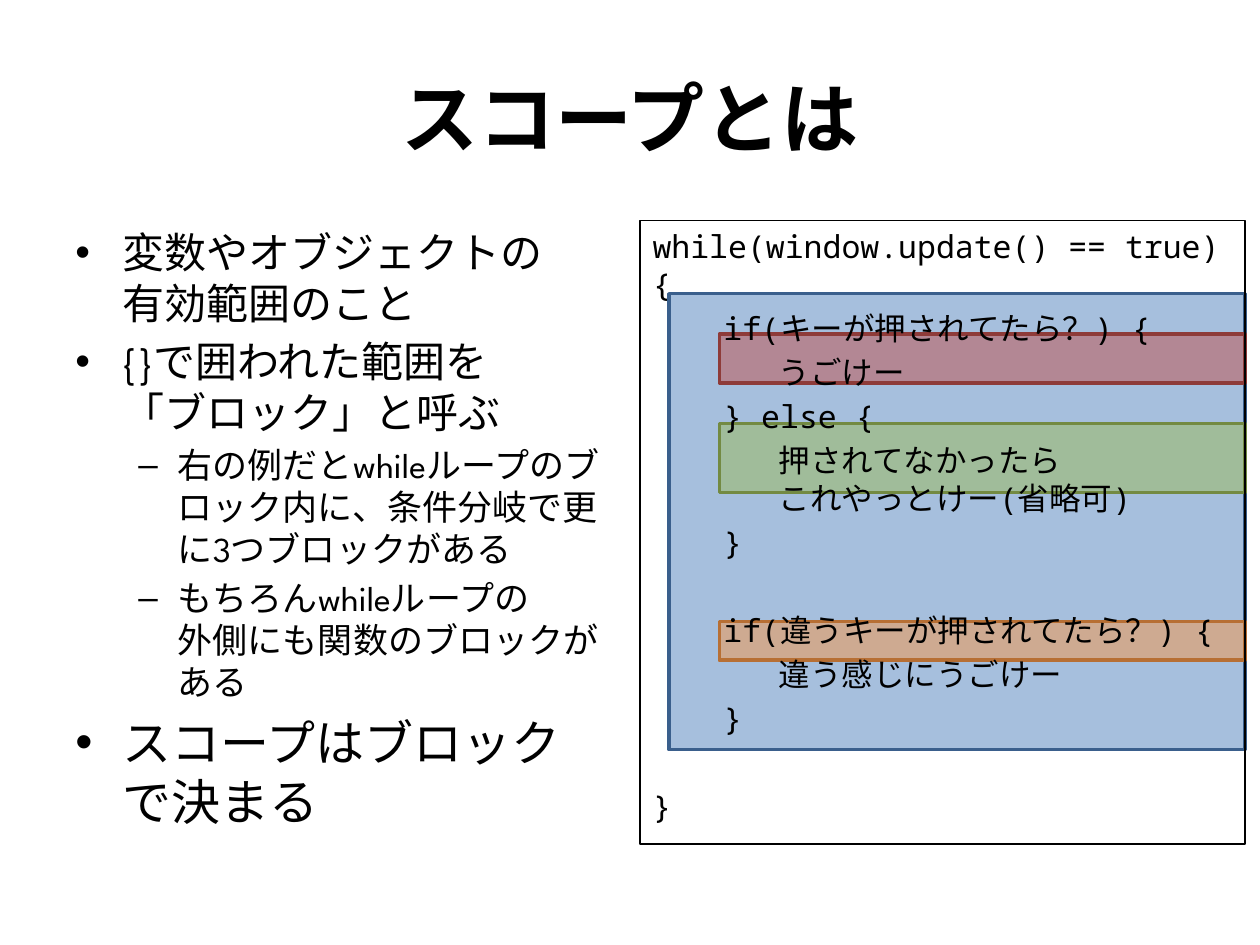
from lxml import etree
from pptx import Presentation
from pptx.dml.color import RGBColor
from pptx.enum.shapes import MSO_SHAPE
from pptx.enum.text import MSO_ANCHOR, PP_ALIGN
from pptx.oxml.ns import qn
from pptx.util import Pt

RECTANGLE = MSO_SHAPE.RECTANGLE
TOP, MIDDLE = MSO_ANCHOR.TOP, MSO_ANCHOR.MIDDLE
LEFT, CENTER = PP_ALIGN.LEFT, PP_ALIGN.CENTER
BODY_FONT, CODE_FONT = "League Spartan", "Noto Sans Mono"
CODE_SIZE = 18
BLANK_LINE = 25.2

# Content: text, size, level
TITLE = "スコープとは"
POINTS = [
    ("変数やオブジェクトの\v有効範囲のこと", 24, 0),
    ("{}で囲われた範囲を\v「ブロック」と呼ぶ", 24, 0),
    ("右の例だとwhileループのブロック内に、条件分岐で更に3つブロックがある", 20, 1),
    ("もちろんwhileループの\v外側にも関数のブロックがある", 20, 1),
    ("スコープはブロックで決まる", 28, 0),
]
BULLETS = [("•", 27, -27), ("–", 58.5, -22.5)]  # mark, margin, indent

# Code lines: text, nesting depth, blank lines above
CODE = [
    ("while(window.update() == true) {", 0, 0),
    ("if(キーが押されてたら？) {", 1, 0),
    ("うごけー", 2, 0),
    ("} else {", 1, 0),
    ("押されてなかったら\vこれやっとけー(省略可)", 2, 0),
    ("}", 1, 0),
    ("if(違うキーが押されてたら？) {", 1, 1),
    ("違う感じにうごけー", 2, 0),
    ("}", 1, 0),
    ("}", 0, 1),
]
CODE_MARGINS = [0, 40.5, 72]

# Code blocks: left, top, height, fill, line
RIGHT_EDGE = 711.4
BLOCKS = [
    (382.3, 167.8, 260.6, "4F81BD", "3A5F8C"),
    (411.1, 190.8, 28.1, "C0504D", "8E3B39"),
    (411.1, 241.9, 39.6, "9BBB59", "738A42"),
    (411.1, 355, 22.3, "F79646", "B76F34"),
]


def color(value):
    return RGBColor.from_string(value)


def set_up_frame(shape, anchor):
    frame = shape.text_frame
    frame.word_wrap = True
    frame.vertical_anchor = anchor
    return frame


def add_paragraph(frame, text, size, font, align=LEFT, bold=False):
    para = frame.paragraphs[0] if not frame.text else frame.add_paragraph()
    para.text = text
    para.alignment = align
    para.font.name = font
    para.font.size = Pt(size)
    para.font.bold = bold
    para.font.color.rgb = color("000000")
    return para


def set_margin(para, margin, indent=0, mark=None):
    properties = para._p.get_or_add_pPr()
    properties.set("marL", str(Pt(margin)))
    properties.set("indent", str(Pt(indent)))
    if mark:
        font = etree.SubElement(properties, qn("a:buFont"), typeface="Arial")
        bullet = etree.SubElement(properties, qn("a:buChar"), char=mark)
        for offset, element in enumerate((font, bullet)):
            properties.remove(element)
            properties.insert(properties.index(properties.find(qn("a:defRPr"))), element)


def add_rectangle(page, left, top, height, line, width):
    shape = page.shapes.add_shape(
        RECTANGLE, Pt(left), Pt(top), Pt(RIGHT_EDGE - left), Pt(height))
    shape.shadow.inherit = False
    shape.line.color.rgb = color(line)
    shape.line.width = Pt(width)
    return shape


deck = Presentation()
deck.slide_width, deck.slide_height = Pt(720), Pt(540)
page = deck.slides.add_slide(deck.slide_layouts[6])

# Title
box = page.shapes.add_textbox(Pt(36), Pt(21.6), Pt(648), Pt(90))
add_paragraph(set_up_frame(box, MIDDLE), TITLE, 44, BODY_FONT, CENTER, True)

# Bullet points
box = page.shapes.add_textbox(Pt(36), Pt(126), Pt(318.2), Pt(356.4))
frame = set_up_frame(box, TOP)
for text, size, level in POINTS:
    para = add_paragraph(frame, text, size, BODY_FONT)
    para.level = level
    para.space_before = Pt(size * 0.2)
    mark, margin, indent = BULLETS[level]
    set_margin(para, margin, indent, mark)

# Half-transparent block areas
for left, top, height, fill, line in BLOCKS:
    block = add_rectangle(page, left, top, height, line, 2)
    block.fill.solid()
    block.fill.fore_color.rgb = color(fill)
    tint = block.fill._xPr.find(qn("a:solidFill"))[0]
    etree.SubElement(tint, qn("a:alpha"), val="50000")

# Code listing
listing = add_rectangle(page, 365.8, 126, 356.4, "000000", 1)
listing.fill.background()
frame = set_up_frame(listing, TOP)
for text, depth, blanks in CODE:
    para = add_paragraph(frame, text, CODE_SIZE, CODE_FONT)
    para.space_before = Pt(CODE_SIZE * 0.2 + blanks * BLANK_LINE)
    set_margin(para, CODE_MARGINS[depth])

deck.save("out.pptx")
